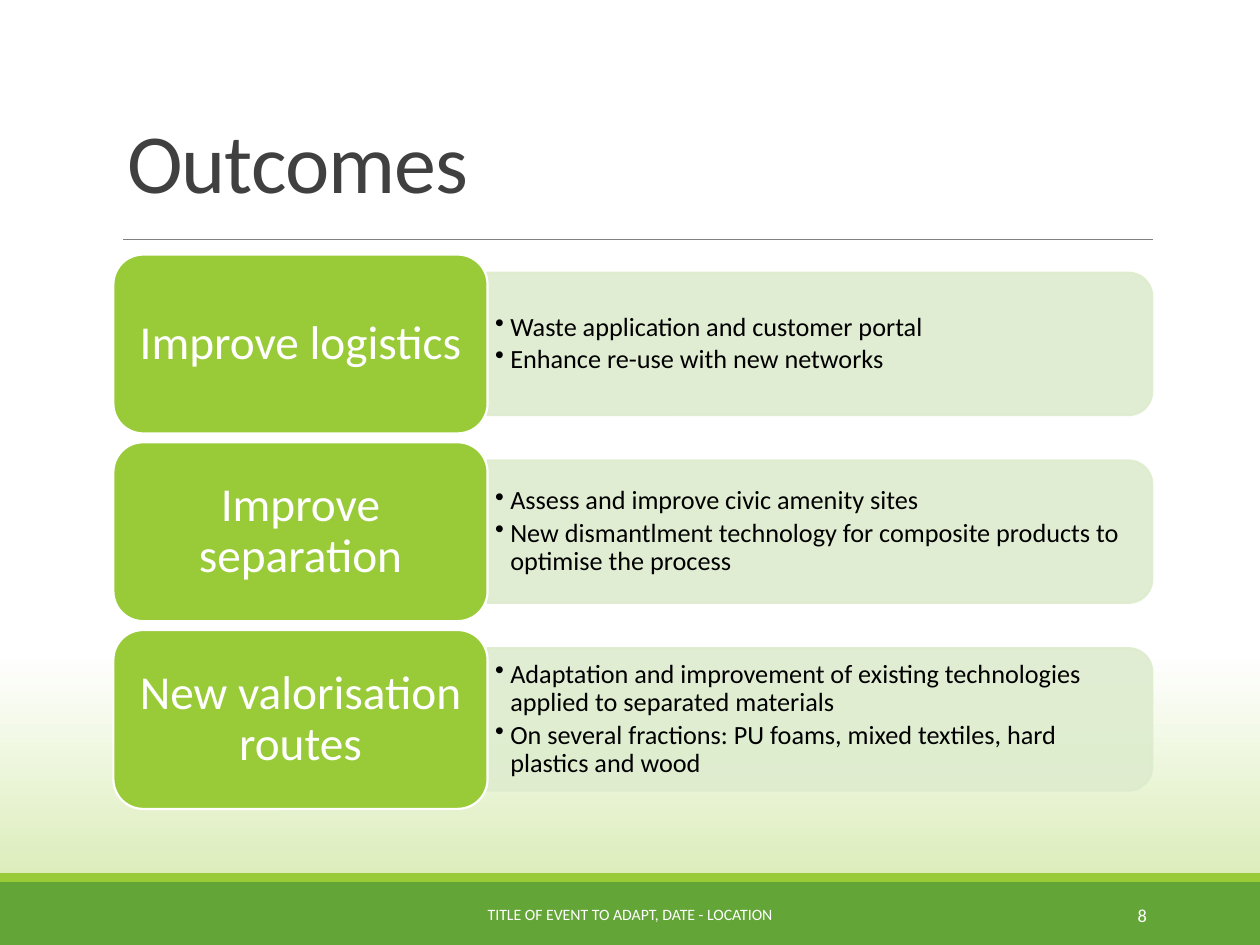
"""Build the Outcomes slide: three goals, each beside a panel of results."""
import pptx
import pptx.dml.color
import pptx.enum.shapes
import pptx.enum.text
import pptx.oxml
import pptx.oxml.ns
import pptx.util

SHAPES = pptx.enum.shapes.MSO_SHAPE
ALIGN = pptx.enum.text.PP_ALIGN
ANCHOR = pptx.enum.text.MSO_ANCHOR
Pt = pptx.util.Pt
Inches = pptx.util.Inches
DRAWING = pptx.oxml.ns.nsdecls("a")
COLORS = {
    "white": "FFFFFF", "black": "000000", "title": "404040", "rule": "808080",
    "band": "63A537", "lime": "99CB38", "panel": "DEECCE", "glow": "D1E8A5",
}
RGB = {role: pptx.dml.color.RGBColor.from_string(code) for role, code in COLORS.items()}

deck = pptx.Presentation()
deck.slide_width, deck.slide_height = Inches(10), Inches(7.5)
unit = deck.slide_width // 100
slide = deck.slides.add_slide(deck.slide_layouts[6])


def add_block(geometry, area, fill, outline=None):
    block = slide.shapes.add_shape(geometry, *[int(cells * unit) for cells in area])
    block.shadow.inherit = False
    block.fill.solid()
    block.fill.fore_color.rgb = RGB[fill]
    if outline:
        block.line.color.rgb = RGB[outline]
        block.line.width = Pt(1.25)
    else:
        block.line.fill.background()
    return block


def add_text(lines, area, size, color, frame_format, paragraph_format, bullet=False):
    frame = slide.shapes.add_textbox(*[int(cells * unit) for cells in area]).text_frame
    for key, value in {"word_wrap": True, "vertical_anchor": ANCHOR.MIDDLE, **frame_format}.items():
        setattr(frame, key, value)
    for index, line in enumerate(lines):
        paragraph = frame.add_paragraph() if index else frame.paragraphs[0]
        for key, value in paragraph_format.items():
            setattr(paragraph, key, value)
        if bullet:
            properties = paragraph._p.get_or_add_pPr()
            properties.set("marL", str(Inches(0.12)))
            properties.set("indent", str(-Inches(0.12)))
            properties.append(pptx.oxml.parse_xml(f'<a:buChar {DRAWING} char="•"/>'))
        run = paragraph.add_run()
        run.text = line
        for key, value in {"name": "Calibri", "size": Pt(size)}.items():
            setattr(run.font, key, value)
        run.font.color.rgb = RGB[color]
    return frame


backdrop = slide.background.fill
backdrop.gradient()
backdrop.gradient_angle = 270
for stop, position, role in zip(backdrop.gradient_stops, (0.69, 1), ("white", "glow")):
    stop.position = position
    stop.color.rgb = RGB[role]

add_block(SHAPES.RECTANGLE, (0, 70, 100, 5), "band")
add_block(SHAPES.RECTANGLE, (0, 69.3, 100, 0.7), "lime")

rule = slide.shapes.add_connector(
    pptx.enum.shapes.MSO_CONNECTOR.STRAIGHT,
    *[int(cells * unit) for cells in (9.8, 19, 91.5, 19)])
rule.line.color.rgb = RGB["rule"]
rule.line.width = Pt(0.5)
rule._element.spPr.append(pptx.oxml.parse_xml(f"<a:effectLst {DRAWING}/>"))

heading = add_text(["Outcomes"], (9.1, 1.3, 82.5, 15.9), 48, "title",
                   {"vertical_anchor": ANCHOR.BOTTOM}, {"line_spacing": 0.85})
heading.paragraphs[0].runs[0].font._element.set("spc", "-50")

outcomes = {
    "Improve logistics": [
        "Waste application and customer portal",
        "Enhance re-use with new networks",
    ],
    "Improve separation": [
        "Assess and improve civic amenity sites",
        "New dismantlment technology for composite products to optimise the process",
    ],
    "New valorisation routes": [
        "Adaptation and improvement of existing technologies applied to separated materials",
        "On several fractions: PU foams, mixed textiles, hard plastics and wood",
    ],
}
goal_frame = {"margin_left": Inches(0.11), "margin_right": Inches(0.11),
              "margin_top": Inches(0.06), "margin_bottom": Inches(0.06)}
result_frame = {"margin_left": Inches(0.06), "margin_right": Inches(0.06),
                "margin_top": Inches(0.03), "margin_bottom": Inches(0.03)}
goal_paragraph = {"alignment": ALIGN.CENTER, "line_spacing": 0.9}
result_paragraph = {"level": 1, "line_spacing": 0.9, "space_after": Pt(2.25)}

for row, (goal, results) in enumerate(outcomes.items()):
    top = 20.2 + 14.9 * row
    panel = add_block(SHAPES.ROUND_2_SAME_RECTANGLE, (59.4, top - 19.3, 11.3, 52.8),
                      "panel", "panel")
    panel.rotation = 90
    for tint in panel._element.spPr.iter(pptx.oxml.ns.qn("a:srgbClr")):
        tint.append(pptx.oxml.parse_xml(f'<a:alpha {DRAWING} val="90000"/>'))
    add_text(results, (38.7, top + 2, 52.2, 10.2), 15, "black",
             result_frame, result_paragraph, bullet=True)
    add_block(SHAPES.ROUNDED_RECTANGLE, (9, top, 29.7, 14.2), "lime", "white")
    add_text([goal], (9.7, top + 0.7, 28.3, 12.8), 27, "white", goal_frame, goal_paragraph)

add_text(["TITLE OF EVENT TO ADAPT, DATE - LOCATION"], (30.2, 70.6, 39.6, 4), 9, "white",
         {}, {"alignment": ALIGN.CENTER})
add_text(["8"], (81.2, 70.6, 10.8, 4), 10.5, "white", {}, {"alignment": ALIGN.RIGHT})

deck.save("out.pptx")
